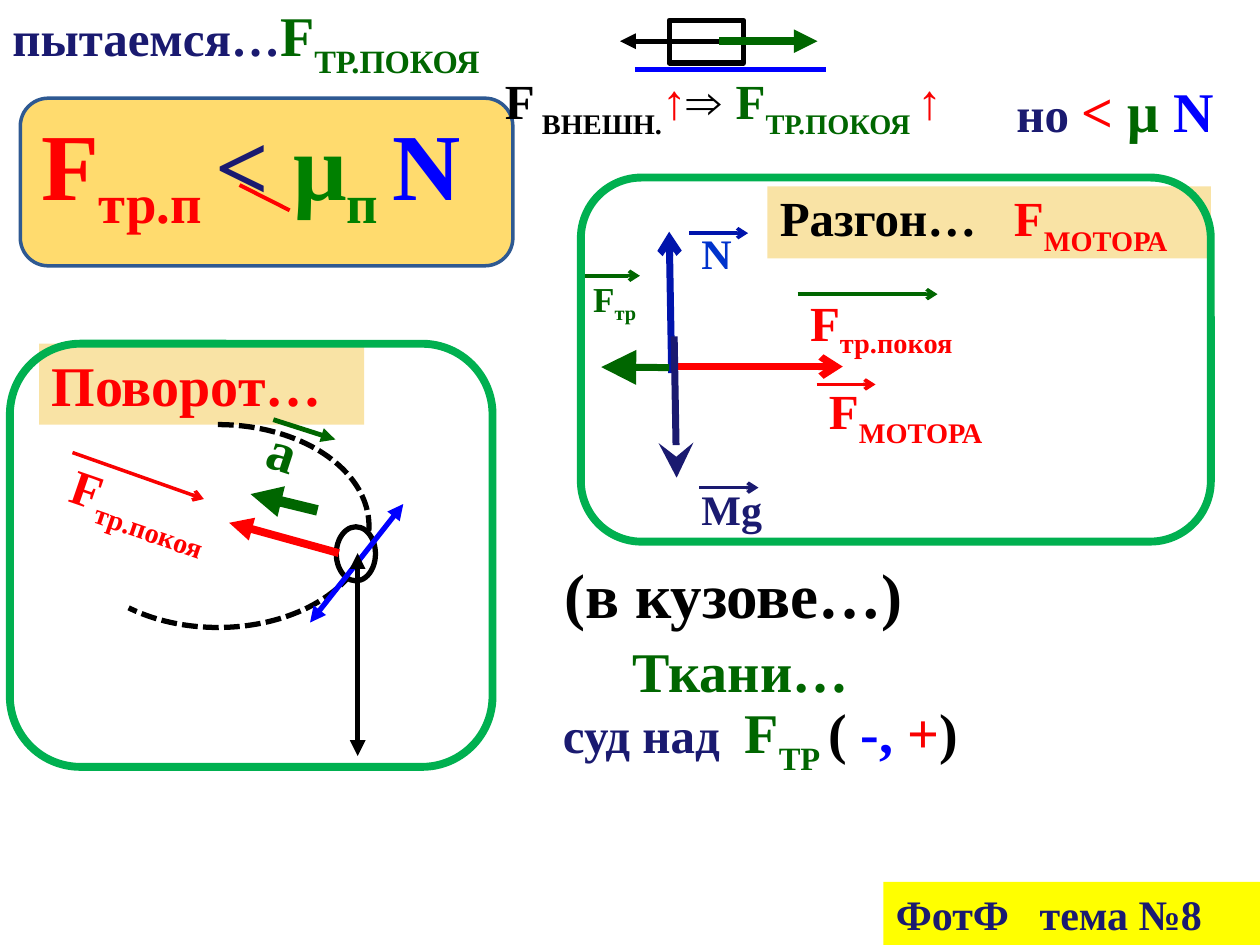
import pptx
import pptx.util
import pptx.dml.color
import pptx.enum.dml
import pptx.enum.shapes
import pptx.enum.text
import pptx.oxml
import pptx.oxml.ns
from pptx.util import Cm

COLOURS = {
    "black": "000000", "white": "FFFFFF", "red": "FF0000", "scarlet": "F90101",
    "navy": "1A1A70", "green": "006600", "leaf": "008000", "emerald": "00B050",
    "blue": "0000FF", "royal": "0014AC", "azure": "0033CC", "steel": "2E5992",
    "gold": "FFC000", "cream": "F9E3A5", "yellow": "FFFF00",
}
SHAPES = pptx.enum.shapes.MSO_SHAPE
MIDDLE = pptx.enum.text.MSO_ANCHOR.MIDDLE


class FrictionSlide:
    """Style and current slide, with one method for each kind of element."""

    font = "Times New Roman"

    def __init__(self, presentation):
        self.slide = presentation.slides.add_slide(presentation.slide_layouts[6])

    def colour(self, name):
        return pptx.dml.color.RGBColor.from_string(COLOURS[name])

    def element(self, parent, tag, **attributes):
        child = pptx.oxml.parse_xml(f"<a:{tag} {pptx.oxml.ns.nsdecls('a')}/>")
        for name, value in attributes.items():
            child.set(name, str(value))
        parent.append(child)
        return child

    def shape(self, kind, box, fill=None, line=None, width=1, alpha=None):
        shape = self.slide.shapes.add_shape(kind, *map(Cm, box))
        shape.shadow.inherit = False
        if fill:
            shape.fill.solid()
            shape.fill.fore_color.rgb = self.colour(fill)
            if alpha:
                colour = shape._element.spPr.find(".//" + pptx.oxml.ns.qn("a:srgbClr"))
                self.element(colour, "alpha", val=alpha * 1000)
        else:
            shape.fill.background()
        if line:
            shape.line.color.rgb = self.colour(line)
            shape.line.width = pptx.util.Pt(width)
        else:
            shape.line.fill.background()
        return shape

    def arc(self, box, start, end, line, width):
        arc = self.shape(SHAPES.ARC, box, None, line, width)
        arc.adjustments[0] = start * 0.6
        arc.adjustments[1] = end * 0.6
        arc.line.dash_style = pptx.enum.dml.MSO_LINE.SQUARE_DOT

    def line(self, start, end, colour, width, head=None, tail=None, size="med"):
        connector = self.slide.shapes.add_connector(
            pptx.enum.shapes.MSO_CONNECTOR.STRAIGHT, *map(Cm, start + end))
        connector.line.color.rgb = self.colour(colour)
        connector.line.width = pptx.util.Pt(width)
        outline = connector._element.spPr.find(pptx.oxml.ns.qn("a:ln"))
        for tag, kind in (("headEnd", head), ("tailEnd", tail)):
            if kind:
                self.element(outline, tag, type=kind, w=size, len=size)
        self.element(connector._element.spPr, "effectLst")

    def lettering(self, shape, pieces, size, anchor=None, wrap=True, tab=None):
        frame = shape.text_frame
        frame.word_wrap = wrap
        frame.auto_size = pptx.enum.text.MSO_AUTO_SIZE.SHAPE_TO_FIT_TEXT
        frame.vertical_anchor = anchor or pptx.enum.text.MSO_ANCHOR.TOP
        paragraph = frame.paragraphs[0]
        paragraph.text = pieces[0][0]
        paragraph.alignment = pptx.enum.text.PP_ALIGN.LEFT
        for piece in pieces[1:]:
            paragraph.add_run().text = piece[0]
        for run, (_, colour, *options) in zip(paragraph.runs, pieces):
            baseline, own_size = options + [0, size][len(options):]
            run.font.name = self.font
            run.font.bold = True
            run.font.size = pptx.util.Pt(own_size)
            run.font.color.rgb = self.colour(colour)
            if baseline:
                run.font._element.set("baseline", str(baseline * 1000))
        if tab:
            stops = self.element(paragraph._p.get_or_add_pPr(), "tabLst")
            self.element(stops, "tab", pos=int(Cm(tab)), algn="l")

    def text(self, box, pieces, size, rotation=0, **options):
        text_box = self.slide.shapes.add_textbox(*map(Cm, box))
        text_box.rotation = rotation
        self.lettering(text_box, pieces, size, **options)

    def label(self, box, fill, pieces, size, **options):
        self.lettering(self.shape(SHAPES.RECTANGLE, box, fill), pieces, size, **options)


def draw_formulas(page):
    page.text((9.93, 1.4, 10.92, 1.45), [
        ("F", "black"), (" ВНЕШН.", "black", -30), ("↑", "scarlet"), ("⇒\t", "black"),
        ("F", "green"), ("ТР.ПОКОЯ ", "green", -30), ("↑", "scarlet")],
        28, anchor=MIDDLE, tab=4.65)
    page.text((0, 0, 10.92, 1.63), [
        ("пытаемся…", "navy", 0, 28), ("F", "green"), ("ТР.ПОКОЯ", "green", -30)],
        32, anchor=MIDDLE)
    page.text((20.24, 1.4, 5.16, 1.63), [
        ("но ", "navy", 0, 28), ("< ", "red"), ("μ ", "green"), ("N", "blue")],
        32, anchor=MIDDLE)
    page.text((0.58, 2.01, 9.83, 2.57), [
        ("F", "red"), ("тр.п ", "red", -25), ("< ", "navy"), ("μ", "leaf"),
        ("п ", "leaf", -25), ("N", "blue")], 54, wrap=False)
    page.line((4.83, 3.73), (5.84, 4.24), "red", 2.25)


def draw_acceleration(page):
    page.label((15.47, 3.76, 8.94, 1.45), "cream", [
        ("Разгон…\t", "black"), ("F", "red"), ("МОТОРА", "red", -30)],
        28, anchor=MIDDLE, tab=4.72)
    page.line((13.61, 7.39), (16.99, 7.39), "red", 4, tail="arrow")
    page.line((13.54, 7.52), (13.49, 4.67), "royal", 4, tail="arrow")
    page.line((12.12, 7.4), (13.49, 7.41), "green", 4, head="triangle", size="lg")
    page.line((13.64, 9.63), (13.59, 6.78), "navy", 4, head="stealth", size="lg")
    vectors = [
        ((13.89, 9.63, 1.98, 1.27), [("Mg", "navy")], 24, (14.1, 9.83), 1.19, "navy"),
        ((13.89, 4.47, 1.98, 1.47), [("N", "azure")], 24, (13.89, 4.7), 1.19, "royal"),
        ((11.71, 5.46, 1.6, 1.12), [("F", "green"), ("тр", "green", -25)], 20,
         (11.71, 5.56), 1.19, "green"),
        ((16.08, 5.77, 3.76, 2.18), [("F", "red"), ("тр.покоя", "red", -25)], 28,
         (16.08, 5.93), 2.82, "green"),
        ((16.46, 7.54, 4.01, 1.45), [("F", "red"), ("МОТОРА", "red", -30)], 28,
         (16.46, 7.75), 1.19, "scarlet"),
    ]
    for box, pieces, size, (left, top), length, colour in vectors:
        page.text(box, pieces, size)
        page.line((left, top), (left + length, top), colour, 2, tail="arrow")


def draw_turn(page):
    page.line((1.45, 9.12), (4.11, 10.06), "scarlet", 2, tail="arrow")
    friction = page.shape(SHAPES.RECTANGLE, (1.04, 9.53, 3.76, 2.18), None, "white", 0.75)
    friction.rotation = 19
    page.lettering(friction, [("F", "red"), ("тр.покоя", "red", -25)], 28)
    page.label((0.79, 6.93, 6.55, 1.63), "cream", [("Поворот…", "red")], 32, anchor=MIDDLE)
    page.arc((1.35, 8.56, 6.09, 4.09), 270, 137.5, "black", 3)
    page.shape(SHAPES.OVAL, (6.78, 10.62, 0.79, 1.09), "white", "black", 3)
    page.line((6.83, 11.15), (4.62, 10.54), "red", 4.5, tail="triangle")
    page.line((6.25, 12.55), (8.13, 10.16), "blue", 3, "triangle", "triangle")
    page.line((6.4, 10.29), (5.05, 9.96), "green", 6, tail="triangle")
    page.line((7.21, 11.15), (7.21, 15.24), "black", 3, "triangle", "triangle")
    page.text((5.18, 8.33, 1.55, 1.63), [("a", "green")], 32, rotation=18.1)
    page.line((5.51, 8.46), (6.76, 8.86), "green", 2.75, tail="triangle")


def draw_notes(page):
    page.text((11.13, 11.07, 8.53, 1.8), [("(в кузове…)", "black")], 36, anchor=MIDDLE)
    page.text((12.5, 12.7, 4.95, 1.63), [("Ткани…", "green")], 32, anchor=MIDDLE)
    page.text((11.1, 14.05, 9.32, 1.63), [
        ("суд над\t", "navy", 0, 28), ("F", "green"), ("ТР ", "green", -30), ("(", "black"),
        (" -, ", "blue"), ("+", "scarlet"), (")", "black")], 32, anchor=MIDDLE, tab=3.66)


def draw_block(page):
    page.shape(SHAPES.RECTANGLE, (13.49, 0.41, 1.5, 0.86), None, "black", 3)
    page.line((14.5, 0.83), (12.5, 0.83), "black", 3, tail="triangle")
    page.line((14.5, 0.83), (16.48, 0.83), "green", 4.5, tail="triangle")
    page.line((12.8, 1.4), (16.66, 1.4), "blue", 3)


def main():
    presentation = pptx.Presentation()
    presentation.slide_width = Cm(25.4)
    presentation.slide_height = Cm(19.05)
    page = FrictionSlide(presentation)
    page.shape(SHAPES.ROUNDED_RECTANGLE, (0.41, 1.98, 9.93, 3.38), "gold", "steel", 2, alpha=57)
    draw_formulas(page)
    draw_acceleration(page)
    draw_turn(page)
    draw_notes(page)
    draw_block(page)
    for frame in ((0.2, 6.93, 9.73, 8.53), (11.71, 3.58, 12.7, 7.34)):
        page.shape(SHAPES.ROUNDED_RECTANGLE, frame, None, "emerald", 4.5)
    page.label((17.81, 17.78, 7.59, 1.27), "yellow", [("ФотФ\tтема №8", "navy")], 24, tab=2.9)
    presentation.save("out.pptx")


if __name__ == "__main__":
    main()
